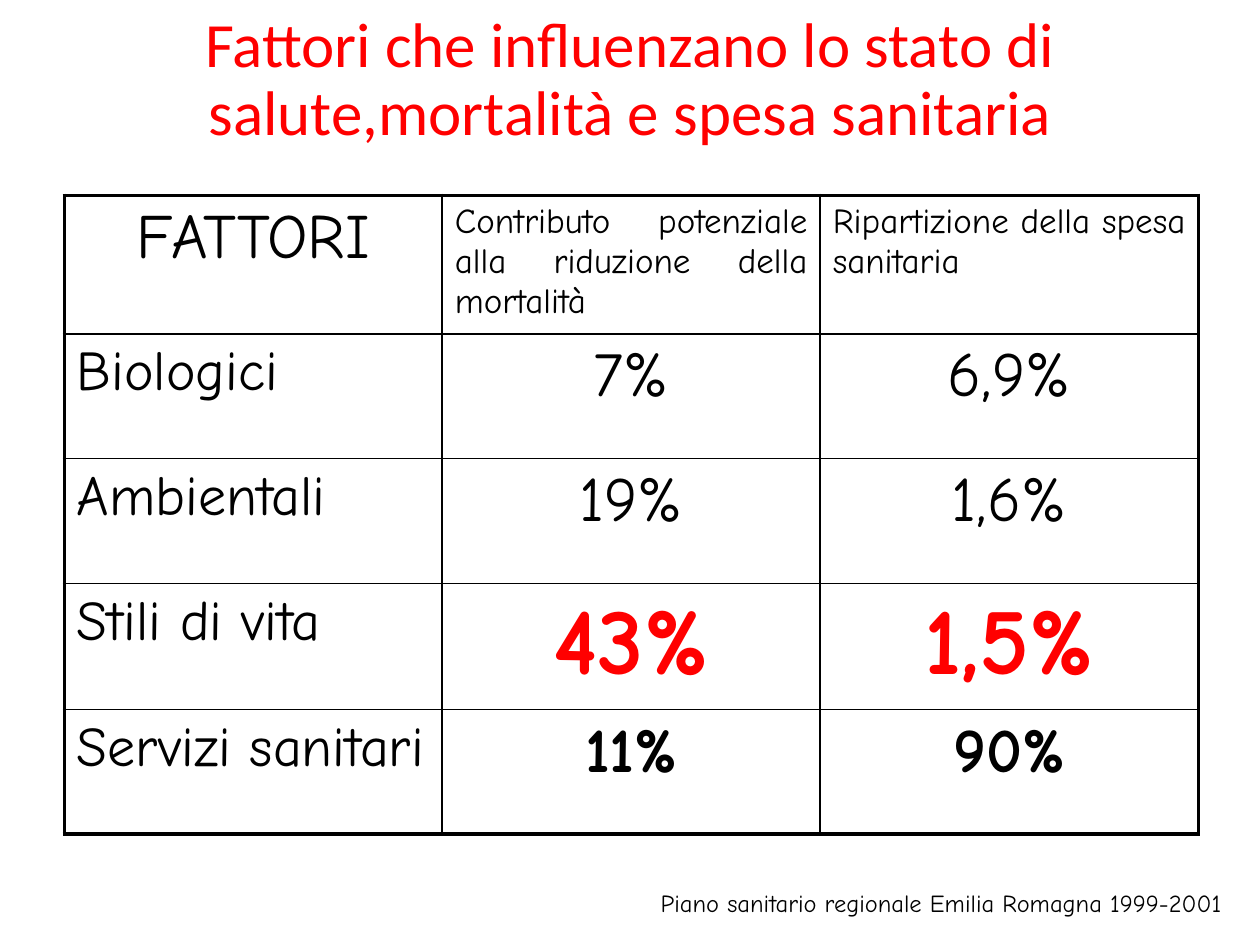
from lxml import etree
from pptx import Presentation
from pptx.dml.color import RGBColor
from pptx.enum.text import MSO_ANCHOR, PP_ALIGN
from pptx.oxml.ns import qn
from pptx.util import Pt

BLACK = RGBColor(0x00, 0x00, 0x00)
RED = RGBColor(0xFF, 0x00, 0x00)
LEFT, CENTER, JUSTIFY = PP_ALIGN.LEFT, PP_ALIGN.CENTER, PP_ALIGN.JUSTIFY
MIDDLE, TOP = MSO_ANCHOR.MIDDLE, MSO_ANCHOR.TOP

TABLE_FONT = "Comic Neue"
THICK, THIN = Pt(2.25), Pt(1)
COLUMN_WIDTH, ROW_HEIGHT = 216, 71.28

HEADING = {"size": Pt(36)}
QUESTION = {"size": Pt(20)}
FACTOR = {"size": Pt(32)}
SHARE = {"size": Pt(36)}
KEY_SHARE = {"size": Pt(54), "bold": True, "color": RED}
BOLD_SHARE = {"size": Pt(36), "bold": True}

HEADER = ("FATTORI", "Contributo potenziale alla riduzione della mortalità",
          "Ripartizione della spesa sanitaria")
FACTORS = [
    (("Biologici", "7%", "6,9%"), SHARE),
    (("Ambientali", "19%", "1,6%"), SHARE),
    (("Stili di vita", "43%", "1,5%"), KEY_SHARE),
    (("Servizi sanitari", "11%", "90%"), BOLD_SHARE),
]


def write(paragraph, text, align, formats):
    paragraph.alignment = align
    run = paragraph.add_run()
    run.text = text
    values = {"name": TABLE_FONT, "color": BLACK, **formats}
    run.font.color.rgb = values.pop("color")
    for attribute, value in values.items():
        setattr(run.font, attribute, value)


def add_text(slide, box, text, align, anchor, formats):
    frame = slide.shapes.add_textbox(*map(Pt, box)).text_frame
    frame.word_wrap = True
    frame.vertical_anchor = anchor
    write(frame.paragraphs[0], text, align, formats)
    return frame.paragraphs[0]


def space_before_percent(paragraph, percent):
    """Space above as a share of the line, which python-pptx cannot set."""
    spacing = etree.SubElement(paragraph._p.get_or_add_pPr(), qn("a:spcBef"))
    etree.SubElement(spacing, qn("a:spcPct")).set("val", str(percent * 1000))


def set_borders(cell, widths):
    properties = cell._tc.get_or_add_tcPr()
    for position, (side, width) in enumerate(widths.items()):
        line = etree.Element(qn(f"a:ln{side}"), w=str(int(width)))
        fill = etree.SubElement(line, qn("a:solidFill"))
        etree.SubElement(fill, qn("a:srgbClr")).set("val", str(BLACK))
        properties.insert(position, line)


def add_factor_table(slide):
    rows = [(HEADER, (HEADING, QUESTION, QUESTION), (CENTER, JUSTIFY, JUSTIFY))]
    rows += [(texts, (FACTOR, share, share), (LEFT, CENTER, CENTER))
             for texts, share in FACTORS]
    last_row, last_column = len(rows) - 1, len(HEADER) - 1
    table = slide.shapes.add_table(
        len(rows), len(HEADER), Pt(36.72), Pt(111.6),
        Pt(COLUMN_WIDTH * len(HEADER)), Pt(ROW_HEIGHT * len(rows))).table
    table.first_row = table.horz_banding = False
    for column in table.columns:
        column.width = Pt(COLUMN_WIDTH)

    for r, (texts, formats, aligns) in enumerate(rows):
        table.rows[r].height = Pt(ROW_HEIGHT)
        for c, text in enumerate(texts):
            cell = table.cell(r, c)
            cell.fill.background()
            paragraph = cell.text_frame.paragraphs[0]
            write(paragraph, text, aligns[c], formats[c])
            space_before_percent(paragraph, 20)
            set_borders(cell, {
                "L": THICK if c == 0 else THIN,
                "R": THICK if c == last_column else THIN,
                "T": THICK if r == 0 else THIN,
                "B": THICK if r == last_row else THIN,
            })


def main():
    presentation = Presentation()
    presentation.slide_width, presentation.slide_height = Pt(720), Pt(540)
    slide = presentation.slides.add_slide(presentation.slide_layouts[6])

    title = add_text(
        slide, (0, 15.12, 720, 62.64),
        "Fattori che influenzano lo stato di salute,mortalità e spesa sanitaria",
        CENTER, MIDDLE, {"name": "Calibri", "size": Pt(36), "color": RED})
    title.line_spacing = 0.9
    add_factor_table(slide)
    add_text(slide, (365.76, 504, 354.24, 23.76),
             " Piano sanitario regionale Emilia Romagna 1999-2001",
             LEFT, TOP, {"size": Pt(14)})
    presentation.save("out.pptx")


if __name__ == "__main__":
    main()
